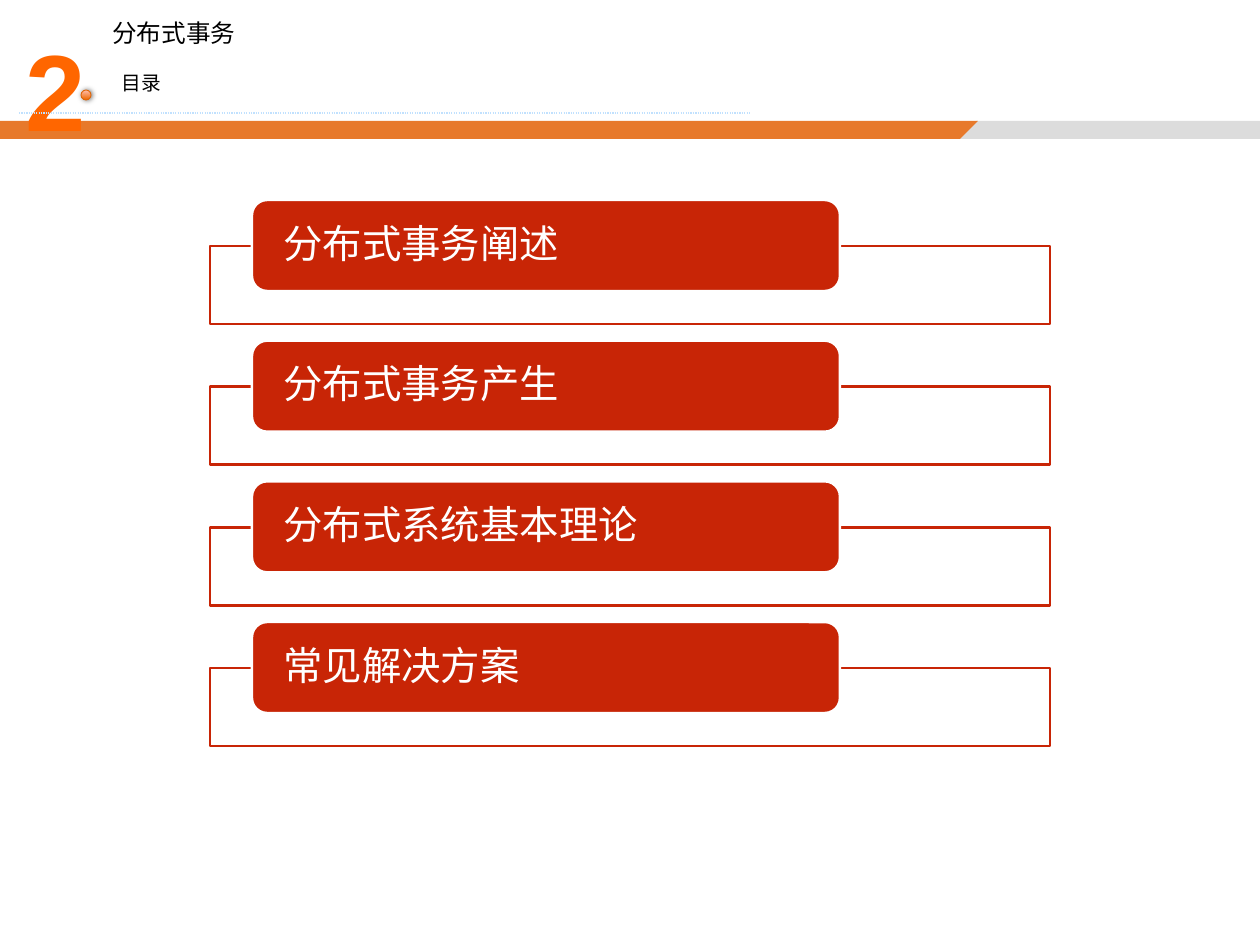
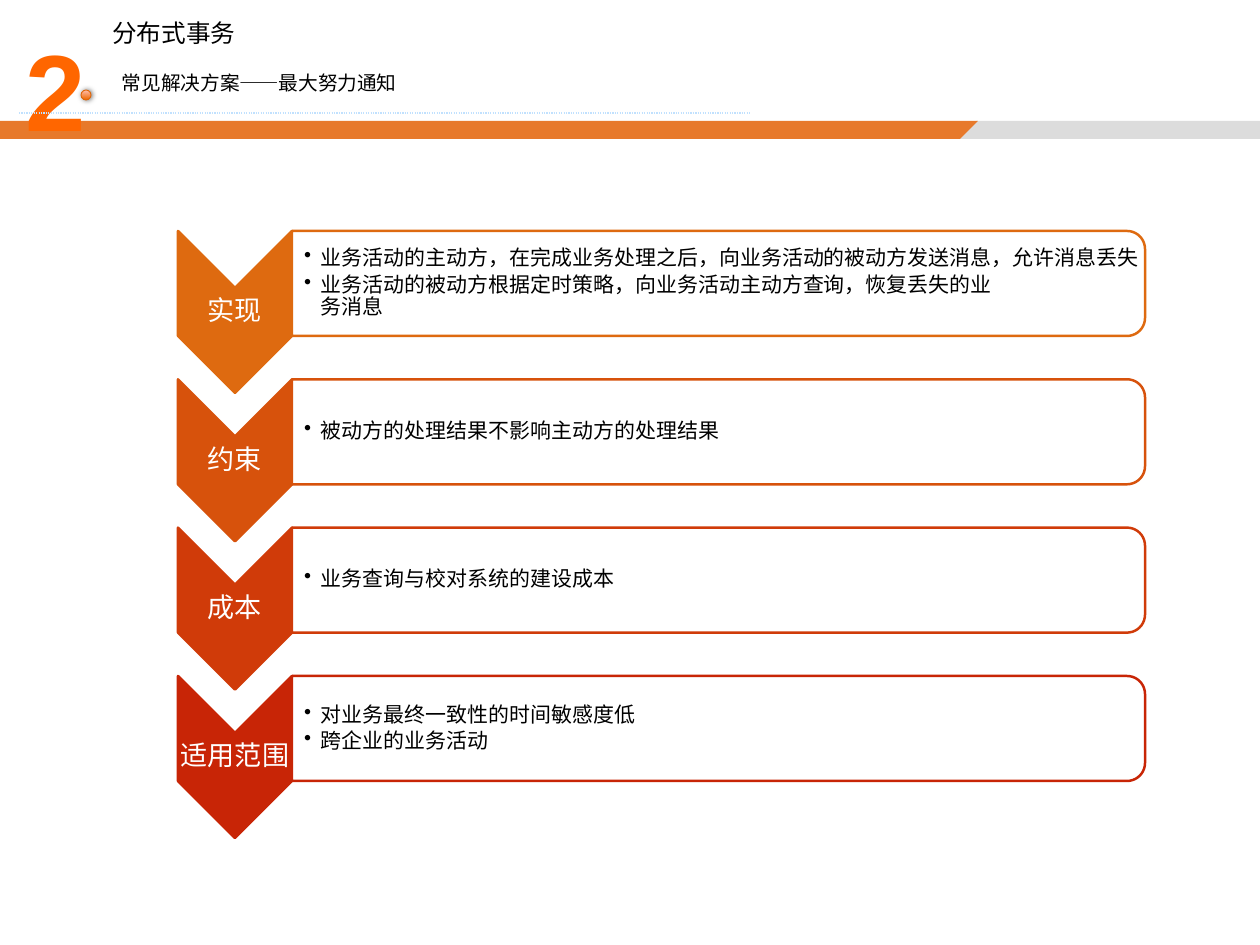
import math
from dataclasses import dataclass

import pptx
import pptx.util
import pptx.dml.color
import pptx.enum.dml
import pptx.enum.shapes
import pptx.enum.text
import pptx.oxml.ns
from lxml import etree

PX = 10320  # EMU in one px
qn = pptx.oxml.ns.qn
Pt = pptx.util.Pt
SHAPE = pptx.enum.shapes.MSO_SHAPE
ALIGN = pptx.enum.text.PP_ALIGN
ANCHOR = pptx.enum.text.MSO_ANCHOR


@dataclass(frozen=True)
class Theme:
    black: str = "000000"
    white: str = "FFFFFF"
    band: str = "E7792B"
    gray: str = "DCDCDC"
    number: str = "FF6600"
    dots: str = "C1E1FE"
    rim: str = "DE670B"
    ball: tuple = ("EE6800", "FFBEAD")
    red: str = "C82506"
    steps: tuple = ("DE6A10", "D7520C", "D03B09", "C82506")
    body: str = "Roboto"
    head: str = "Noto Sans CJK SC"
    sub: str = "Noto Sans CJK JP"
    digit: str = "Arial"
    huge: int = 88
    large: int = 32
    label: int = 22
    title: int = 20
    text: int = 17
    small: int = 16


T = Theme()


def px(*vals):
    return [round(v * PX) for v in vals]


def rgb(code):
    return pptx.dml.color.RGBColor.from_string(code)


def paint(shape, fill, line=None, width=2):
    shape.shadow.inherit = False
    shape.fill.solid()
    shape.fill.fore_color.rgb = rgb(fill)
    if line:
        shape.line.color.rgb = rgb(line)
        shape.line.width = Pt(width)
    else:
        shape.line.fill.background()
    return shape


def shape(slide, kind, box):
    return slide.shapes.add_shape(kind, *px(*box))


def outline(slide, pts):
    pts = [tuple(px(*p)) for p in pts]
    pen = slide.shapes.build_freeform(*pts[0], scale=1.0)
    pen.add_line_segments(pts[1:], close=True)
    return pen.convert_to_shape()


def frame(shape, pad, anchor=ANCHOR.TOP, wrap=True):
    tf = shape.text_frame
    tf.auto_size = pptx.enum.text.MSO_AUTO_SIZE.NONE
    tf.word_wrap = wrap
    tf.vertical_anchor = anchor
    (tf.margin_left, tf.margin_top,
     tf.margin_right, tf.margin_bottom) = px(*pad)
    return tf


def write(para, text, size, color, font, align=ALIGN.LEFT, bold=False):
    para.alignment = align
    for i, part in enumerate(text.split("\n")):
        if i:
            para.add_line_break()
        run = para.add_run()
        run.text = part
        run.font.size = Pt(size)
        run.font.bold = bold
        run.font.color.rgb = rgb(color)
        run.font.name = font
        ea = etree.SubElement(run.font._element, qn("a:ea"))
        ea.set("typeface", font)


def bullet(para):
    para.level = 1
    pr = para._p.get_or_add_pPr()
    indent, = px(17)
    pr.set("marL", str(indent))
    pr.set("indent", str(-indent))
    etree.SubElement(pr, qn("a:buChar")).set("char", "•")


def ball(slide, box):
    dot = shape(slide, SHAPE.OVAL, box)
    dot.fill.gradient()
    dot.fill.gradient_angle = 90
    for stop, color, pos in zip(dot.fill.gradient_stops, T.ball, (0, 1)):
        stop.color.rgb = rgb(color)
        stop.position = pos
    dot.line.color.rgb = rgb(T.rim)
    dot.line.width = Pt(0.75)
    # Soft shadow
    dot.shadow.inherit = False
    fx = dot._element.spPr.find(qn("a:effectLst"))
    cast = etree.SubElement(fx, qn("a:outerShdw"), blurRad=str(Pt(4)),
                            dist=str(Pt(1)), dir="0")
    tint = etree.SubElement(cast, qn("a:srgbClr"), val=T.black)
    etree.SubElement(tint, qn("a:alpha"), val="50000")


def header(slide, topic, width):
    # Bands
    top, low = 121, 139
    paint(outline(slide, [(976, top), (959, low), (1260, low), (1260, top)]),
          T.gray)
    paint(outline(slide, [(0, top), (978, top), (960, low), (0, low)]),
          T.band)
    # Chapter number
    num = slide.shapes.add_textbox(*px(20, -24, 71, 168))
    tf = frame(num, (0, 47, 0, 0))
    write(tf.paragraphs[0], "2", T.huge, T.number, T.digit, ALIGN.CENTER, True)
    # Title
    head = slide.shapes.title
    head.left, head.top, head.width, head.height = px(103, 14, 142, 68)
    tf = frame(head, (9, 4, 9, 4), wrap=False)
    write(tf.paragraphs[0], "分布式事务", T.title, T.black, T.head, ALIGN.CENTER)
    # Ball and dotted rule
    ball(slide, (81, 90, 10, 10))
    rule = slide.shapes.add_connector(
        pptx.enum.shapes.MSO_CONNECTOR.STRAIGHT, *px(19, 113, 751, 113))
    rule.line.color.rgb = rgb(T.dots)
    rule.line.width = Pt(1)
    rule.line.dash_style = pptx.enum.dml.MSO_LINE.ROUND_DOT
    etree.SubElement(rule._element.spPr, qn("a:effectLst"))
    # Topic
    sub = slide.shapes.add_textbox(*px(113, 67, width, 33))
    tf = frame(sub, (9, 4, 9, 4))
    write(tf.paragraphs[0], topic, T.small, T.black, T.sub)


def agenda(slide, box, items):
    left, top, width, height = box
    tray, pill = 78, 91
    pitch = (height - pill - 33) / (len(items) - 1)
    for i, item in enumerate(items):
        y = top + i * pitch
        paint(shape(slide, SHAPE.RECTANGLE, (left, y + 46, width, tray)),
              T.white, T.red)
        card = shape(slide, SHAPE.ROUNDED_RECTANGLE,
                     (left + 42, y, width * 0.7, pill))
        paint(card, T.red, T.white)
        para = frame(card, (27, 4, 27, 4), ANCHOR.MIDDLE).paragraphs[0]
        para.line_spacing = 0.9
        write(para, item, T.large, T.white, T.body)


def arrow(slide, box, text, color):
    x, y, w, h = box
    mid, notch = x + w / 2, w / 2
    form = outline(slide, [(x + w, y), (x + w, y + h - notch), (mid, y + h),
                           (x, y + h - notch), (x, y), (mid, y + notch)])
    paint(form, color, color)
    para = frame(form, (1, 58, 1, 58), ANCHOR.MIDDLE).paragraphs[0]
    para.line_spacing = 0.9
    write(para, text, T.label, T.white, T.body, ALIGN.CENTER)


def panel(slide, box, lines, color):
    x, y, w, h = box
    r, n = 18, 10
    # Right corners are round
    turn = [math.pi / 2 * (k / n - 1) for k in range(n + 1)]
    arc = [(x + w - r + r * math.cos(a), r + r * math.sin(a)) for a in turn]
    upper = [(u, y + v) for u, v in arc]
    lower = [(u, y + h - v) for u, v in reversed(arc)]
    form = outline(slide, [(x, y), *upper, *lower, (x, y + h)])
    paint(form, T.white, color)
    tf = frame(form, (12, 6, 4, 6), ANCHOR.MIDDLE)
    for i, line in enumerate(lines):
        para = tf.add_paragraph() if i else tf.paragraphs[0]
        bullet(para)
        para.line_spacing = 0.9
        para.space_after = Pt(3)
        write(para, line, T.text, T.black, T.body)


def steps(slide, box, rows):
    left, top, width, height = box
    wide, tall = 114, 162
    pitch = (height - tall) / (len(rows) - 1)
    for i, ((name, lines), color) in enumerate(zip(rows, T.steps)):
        y = top + i * pitch
        arrow(slide, (left, y, wide, tall), name, color)
        panel(slide, (left + wide, y, width - wide, tall - wide / 2),
              lines, color)


def main():
    deck = pptx.Presentation()
    deck.slide_width, deck.slide_height = px(1260, 945)
    layout = deck.slide_layouts[5]

    page = deck.slides.add_slide(layout)
    header(page, "目录", 385)
    agenda(page, (210, 200, 840, 546),
           ["分布式事务阐述", "分布式事务产生", "分布式系统基本理论", "常见解决方案"])

    page = deck.slides.add_slide(layout)
    header(page, "常见解决方案——最大努力通知", 504)
    steps(page, (178, 231, 967, 607), [
        ("实现", ["业务活动的主动方，在完成业务处理之后，"
                "向业务活动的被动方发送消息，允许消息丢失",
                "业务活动的被动方根据定时策略，"
                "向业务活动主动方查询，恢复丢失的业\n务消息"]),
        ("约束", ["被动方的处理结果不影响主动方的处理结果"]),
        ("成本", ["业务查询与校对系统的建设成本"]),
        ("适用范围", ["对业务最终一致性的时间敏感度低", "跨企业的业务活动"]),
    ])
    deck.save("out.pptx")


if __name__ == "__main__":
    main()
